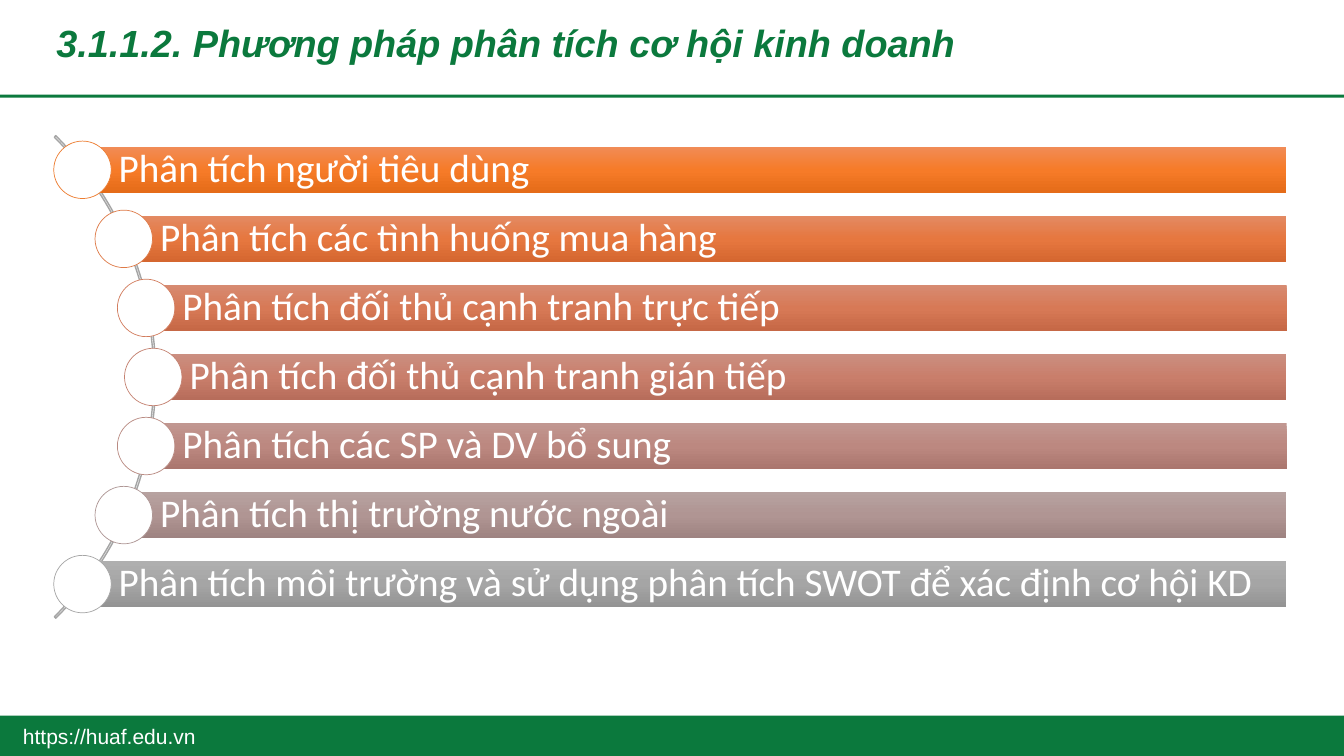
from copy import deepcopy
from dataclasses import dataclass
from math import sqrt

from pptx import Presentation
from pptx.dml.color import RGBColor
from pptx.enum.shapes import MSO_SHAPE
from pptx.enum.text import MSO_ANCHOR, MSO_AUTO_SIZE, PP_ALIGN
from pptx.shapes.autoshape import Shape
from pptx.slide import Slide
from pptx.util import Inches, Pt


@dataclass(frozen=True)
class Theme:
    green: str = "0B793D"
    white: str = "FFFFFF"
    grey: str = "A5A5A5"
    heading_font: str = "Arial"
    body_font: str = "Calibri"
    title_size: int = 27
    step_size: int = 28
    footer_size: int = 15


@dataclass(frozen=True)
class Box:
    left: float
    top: float
    width: float
    height: float

    def lengths(self) -> list[Inches]:
        return [Inches(value) for value in (self.left, self.top, self.width, self.height)]


@dataclass(frozen=True)
class Step:
    text: str
    gradient: tuple[str, str, str]
    outline: str


THEME = Theme()
SLIDE_WIDTH, SLIDE_HEIGHT = 13.33, 7.5
FOOTER_TOP, FOOTER_HEIGHT = 7.1, 0.4

ARC_CENTER_X, ARC_CENTER_Y = -1.84, 3.74
ARC_SIZE = 6.77
NODE_PATH_RADIUS = 3.36
STEP_PITCH = 0.685
BAR_RIGHT, BAR_HEIGHT = 12.76, 0.46
NODE_SIZE = 0.57

STEPS = [
    Step("Phân tích người tiêu dùng", ("F18C57", "F67B28", "E56C19"), "ED7D31"),
    Step("Phân tích các tình huống mua hàng", ("E38A63", "E6773F", "D56730"), "DE7A47"),
    Step("Phân tích đối thủ cạnh tranh trực tiếp", ("D78B72", "D77956", "C66846"), "D17B5C"),
    Step("Phân tích đối thủ cạnh tranh gián tiếp", ("CB8F81", "C97E6B", "B76D5B"), "C48170"),
    Step("Phân tích các SP và DV bổ sung", ("C19791", "BC8880", "AA766E"), "B98A82"),
    Step("Phân tích thị trường nước ngoài", ("B7A2A0", "B09593", "9E8381"), "AE9694"),
    Step("Phân tích môi trường và sử dụng phân tích SWOT để xác định cơ hội KD",
         ("AFAFAF", "A5A5A5", "939393"), "A5A5A5"),
]


def set_attributes(target: object, values: dict[str, object]) -> None:
    for name, value in values.items():
        setattr(target, name, value)


def write_text(shape: Shape, text: str, color: str, frame: dict[str, object],
               paragraph_format: dict[str, object], font: dict[str, object]) -> None:
    text_frame = shape.text_frame
    set_attributes(text_frame, {"word_wrap": True, "auto_size": MSO_AUTO_SIZE.NONE} | frame)
    paragraph = text_frame.paragraphs[0]
    paragraph.text = text
    set_attributes(paragraph, paragraph_format)
    set_attributes(paragraph.runs[0].font, font)
    paragraph.runs[0].font.color.rgb = RGBColor.from_string(color)


def add_preset(slide: Slide, preset: MSO_SHAPE, box: Box, fill: str | None = None,
               line: str | None = None, line_width: float = 0.5) -> Shape:
    shape = slide.shapes.add_shape(preset, *box.lengths())
    shape.shadow.inherit = False
    if fill:
        shape.fill.solid()
        shape.fill.fore_color.rgb = RGBColor.from_string(fill)
    else:
        shape.fill.background()
    if line:
        shape.line.color.rgb = RGBColor.from_string(line)
        shape.line.width = Pt(line_width)
    else:
        shape.line.fill.background()
    return shape


def fill_gradient(shape: Shape, colors: tuple[str, str, str]) -> None:
    """Fill from top to bottom with evenly spaced colours."""
    shape.fill.gradient()
    shape.fill.gradient_angle = 270
    first_stop = shape.element.spPr.xpath("./a:gradFill/a:gsLst/a:gs")[0]
    first_stop.addnext(deepcopy(first_stop))
    for index, (stop, color) in enumerate(zip(shape.fill.gradient_stops, colors)):
        stop.position = index / (len(colors) - 1)
        stop.color.rgb = RGBColor.from_string(color)


def add_title(slide: Slide, text: str) -> None:
    title = slide.shapes.title
    title.left, title.top, title.width, title.height = Box(0.46, 0.18, 12.37, 0.52).lengths()
    write_text(title, text, THEME.green,
               {"vertical_anchor": MSO_ANCHOR.BOTTOM},
               {"alignment": PP_ALIGN.LEFT, "line_spacing": 0.9},
               {"name": THEME.heading_font, "size": Pt(THEME.title_size),
                "bold": True, "italic": True})


def add_bands(slide: Slide) -> None:
    for top, height in ((FOOTER_TOP, FOOTER_HEIGHT), (0.94, 0.03)):
        add_preset(slide, MSO_SHAPE.RECTANGLE, Box(0, top, SLIDE_WIDTH, height), THEME.green)


def add_footer(slide: Slide, text: str) -> None:
    footer = slide.shapes.add_textbox(*Box(0, FOOTER_TOP, 2.17, FOOTER_HEIGHT).lengths())
    write_text(footer, text, THEME.white,
               {"vertical_anchor": MSO_ANCHOR.MIDDLE},
               {"alignment": PP_ALIGN.CENTER},
               {"name": THEME.heading_font, "size": Pt(THEME.footer_size)})


def add_arc(slide: Slide) -> None:
    box = Box(ARC_CENTER_X - ARC_SIZE / 2, ARC_CENTER_Y - ARC_SIZE / 2, ARC_SIZE, ARC_SIZE)
    arc = add_preset(slide, MSO_SHAPE.BLOCK_ARC, box, line=THEME.grey, line_width=1)
    for index, value in enumerate((189, 27, 0.003)):
        arc.adjustments[index] = value


def add_step(slide: Slide, step: Step, offset: float) -> None:
    """Draw a bar and its node, offset vertically from the arc's centre."""
    center_x = ARC_CENTER_X + sqrt(NODE_PATH_RADIUS**2 - offset**2)
    center_y = ARC_CENTER_Y + offset
    bar = add_preset(slide, MSO_SHAPE.RECTANGLE,
                     Box(center_x, center_y - BAR_HEIGHT / 2, BAR_RIGHT - center_x, BAR_HEIGHT))
    fill_gradient(bar, step.gradient)
    write_text(bar, step.text, THEME.white,
               {"vertical_anchor": MSO_ANCHOR.MIDDLE, "margin_left": Inches(0.36),
                "margin_top": Inches(0.08), "margin_right": Inches(0.08),
                "margin_bottom": Inches(0.08)},
               {"alignment": PP_ALIGN.LEFT, "line_spacing": 0.9},
               {"name": THEME.body_font, "size": Pt(THEME.step_size)})
    node_box = Box(center_x - NODE_SIZE / 2, center_y - NODE_SIZE / 2, NODE_SIZE, NODE_SIZE)
    add_preset(slide, MSO_SHAPE.OVAL, node_box, THEME.white, step.outline)


def main() -> None:
    presentation = Presentation()
    presentation.slide_width = Inches(SLIDE_WIDTH)
    presentation.slide_height = Inches(SLIDE_HEIGHT)
    slide = presentation.slides.add_slide(presentation.slide_layouts.get_by_name("Title Only"))
    add_bands(slide)
    add_title(slide, "3.1.1.2. Phương pháp phân tích cơ hội kinh doanh")
    add_arc(slide)
    for index, step in enumerate(STEPS):
        add_step(slide, step, (index - (len(STEPS) - 1) / 2) * STEP_PITCH)
    add_footer(slide, "https://huaf.edu.vn")
    presentation.save("out.pptx")


if __name__ == "__main__":
    main()
